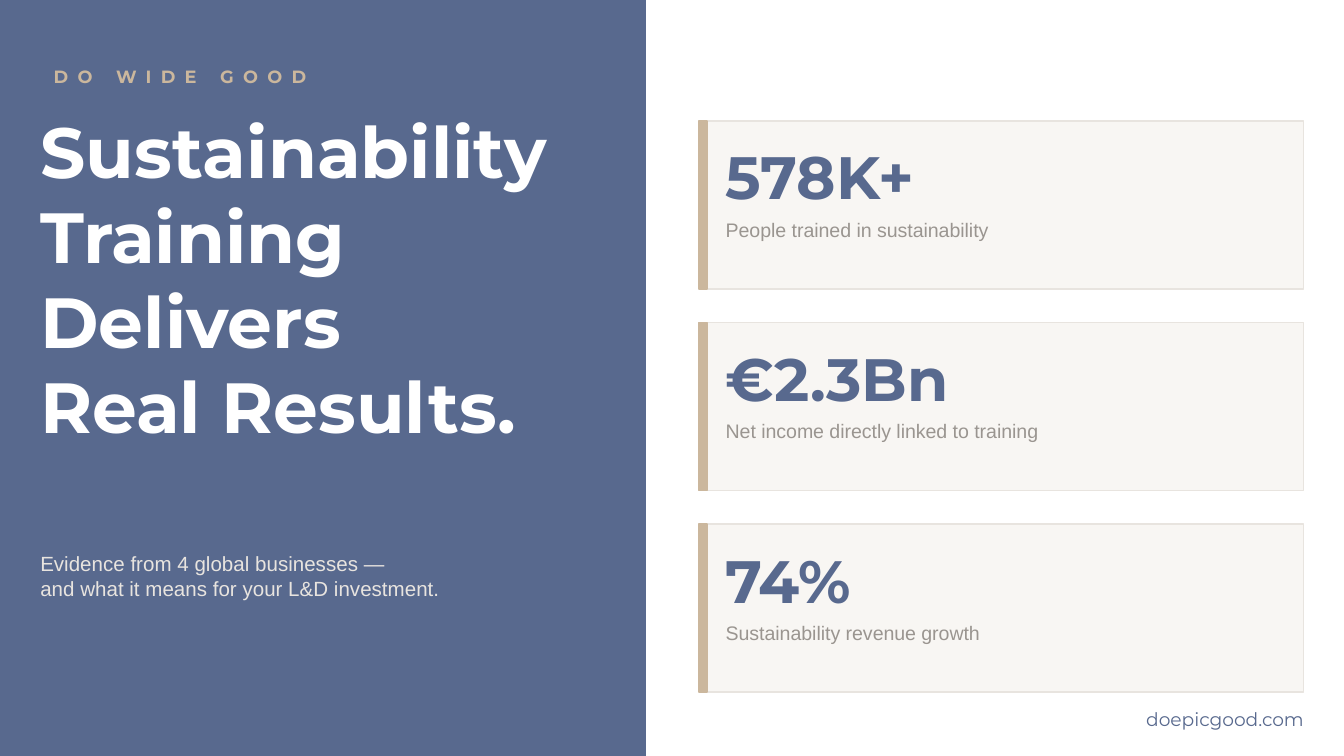
"""Build a title slide with a headline panel and three result cards."""
from typing import NamedTuple

from pptx import Presentation
from pptx.dml.color import RGBColor
from pptx.enum import shapes, text
from pptx.util import Pt

BLUE, SAND, WHITE = "58698E", "CBB79D", "FFFFFF"
CREAM, MIST, GREY = "F8F6F3", "E8E4DF", "9A9590"
CARD_LEFT, CARD_TOP, CARD_WIDTH, CARD_HEIGHT, CARD_PITCH = 374.4, 64.8, 324, 90, 108


class Area(NamedTuple):
    left: float
    top: float
    width: float
    height: float


class Style(NamedTuple):
    name: str
    size: float
    color: str
    bold: bool = False
    align: text.PP_ALIGN = text.PP_ALIGN.LEFT
    anchor: text.MSO_ANCHOR = text.MSO_ANCHOR.TOP
    tracking: float = 0


class Result(NamedTuple):
    figure: str
    label: str


MIDDLE = text.MSO_ANCHOR.MIDDLE
BRAND = Style("Montserrat", 9.5, SAND, True, anchor=MIDDLE, tracking=5)
HEADLINE = Style("Montserrat", 38, WHITE, True)
SUBTITLE = Style("Arial", 11, MIST)
FIGURE = Style("Montserrat", 32, BLUE, True, anchor=MIDDLE)
LABEL = Style("Arial", 10.5, GREY)
WEBSITE = Style("Montserrat", 10, BLUE, align=text.PP_ALIGN.RIGHT, anchor=MIDDLE)

RESULTS = [
    Result("578K+", "People trained in sustainability"),
    Result("€2.3Bn", "Net income directly linked to training"),
    Result("74%", "Sustainability revenue growth"),
]


def rgb(value: str) -> RGBColor:
    return RGBColor.from_string(value)


def fill_text(box, lines: list[str], style: Style) -> None:
    frame = box.text_frame
    frame.text = "\n".join(lines)
    frame.word_wrap = True
    frame.auto_size = text.MSO_AUTO_SIZE.NONE
    frame.vertical_anchor = style.anchor
    frame.margin_left = frame.margin_top = frame.margin_right = frame.margin_bottom = 0
    for para in frame.paragraphs:
        para.alignment = style.align
        para.font.name = style.name
        para.font.size = Pt(style.size)
        para.font.bold = style.bold
        para.font.color.rgb = rgb(style.color)
        if style.tracking:
            for span in para.runs:
                span._r.get_or_add_rPr().set("spc", str(style.tracking * 100))


def add_text(page, area: Area, lines: list[str], style: Style) -> None:
    fill_text(page.shapes.add_textbox(*map(Pt, area)), lines, style)


def add_block(page, area: Area, fill: str, line: str) -> None:
    block = page.shapes.add_shape(shapes.MSO_SHAPE.RECTANGLE, *map(Pt, area))
    block.shadow.inherit = False
    block.fill.solid()
    block.fill.fore_color.rgb = rgb(fill)
    block.line.color.rgb = rgb(line)
    block.line.width = Pt(1)


def place_title(page, area: Area, lines: list[str]) -> None:
    title = page.shapes.title
    title.left, title.top, title.width, title.height = map(Pt, area)
    fill_text(title, lines, HEADLINE)
    title.element.getparent().append(title.element)


def add_card(page, top: float, result: Result) -> None:
    add_block(page, Area(CARD_LEFT, top, CARD_WIDTH, CARD_HEIGHT), CREAM, MIST)
    add_block(page, Area(CARD_LEFT, top, 4.32, CARD_HEIGHT), SAND, SAND)
    add_text(page, Area(CARD_LEFT + 14.4, top + 7.2, 295.2, 44.64), [result.figure], FIGURE)
    add_text(page, Area(CARD_LEFT + 14.4, top + 51.84, 295.2, 30.24), [result.label], LABEL)


def main() -> None:
    deck = Presentation()
    deck.slide_width, deck.slide_height = Pt(720), Pt(405)
    page = deck.slides.add_slide(deck.slide_layouts.get_by_name("Title Only"))

    add_block(page, Area(0, 0, 345.6, 405), BLUE, BLUE)
    add_text(page, Area(28.8, 27.36, 288, 27.36), ["DO WIDE GOOD"], BRAND)
    place_title(page, Area(21.6, 57.6, 302.4, 230.4),
                ["Sustainability", "Training Delivers", "Real Results."])
    add_text(page, Area(21.6, 295.2, 302.4, 72),
             ["Evidence from 4 global businesses —",
              "and what it means for your L&D investment."], SUBTITLE)
    for index, result in enumerate(RESULTS):
        add_card(page, CARD_TOP + index * CARD_PITCH, result)
    add_text(page, Area(CARD_LEFT, 374.4, CARD_WIDTH, 21.6), ["doepicgood.com"], WEBSITE)

    deck.save("out.pptx")


if __name__ == "__main__":
    main()
